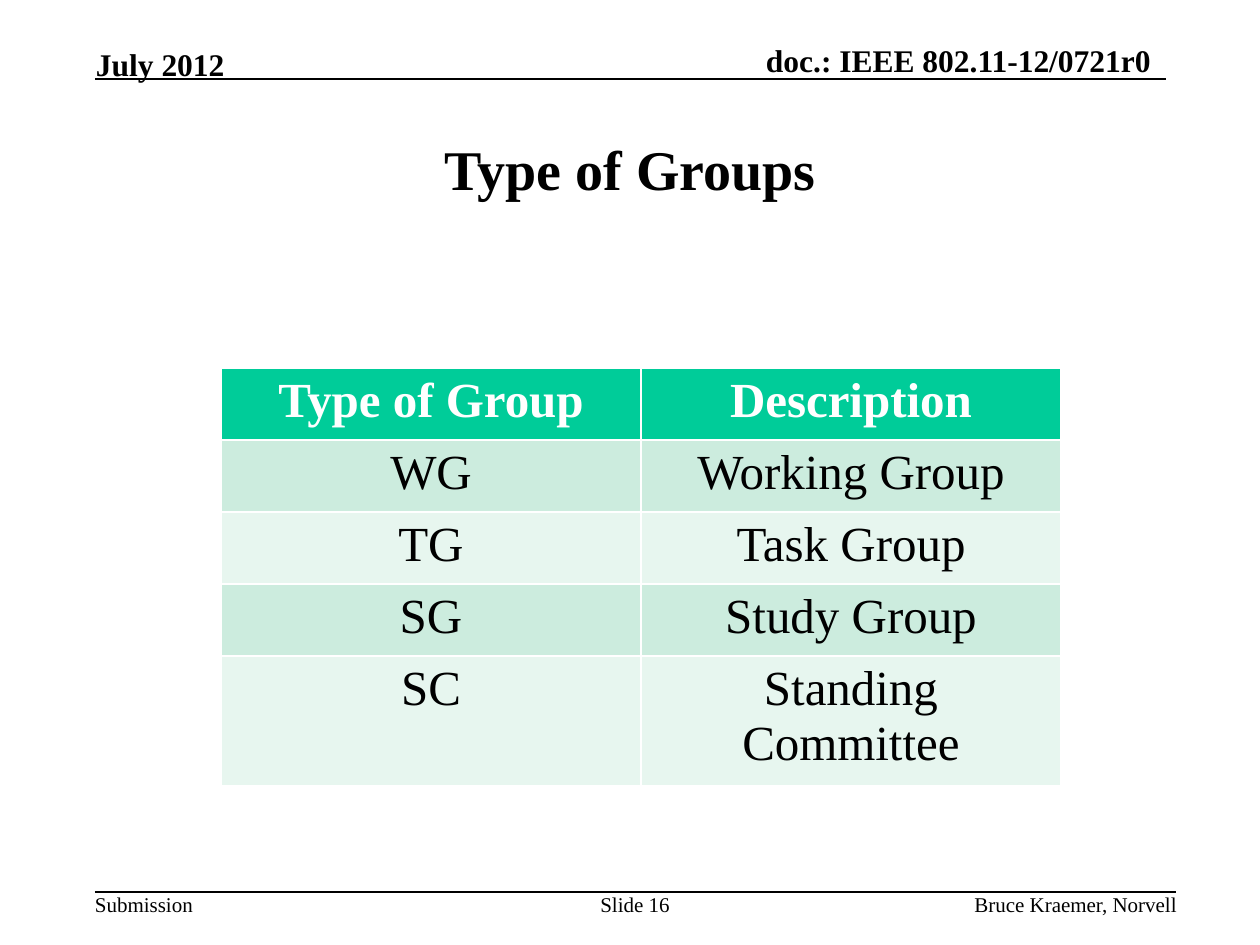
from pptx import Presentation
from pptx.util import Pt
from pptx.dml.color import RGBColor
from pptx.enum.shapes import MSO_CONNECTOR
from pptx.enum.text import MSO_ANCHOR, PP_ALIGN
from lxml import etree

LEFT, MID, RIGHT = PP_ALIGN.LEFT, PP_ALIGN.CENTER, PP_ALIGN.RIGHT
TOP, CENTER, BOTTOM = MSO_ANCHOR.TOP, MSO_ANCHOR.MIDDLE, MSO_ANCHOR.BOTTOM
STRAIGHT = MSO_CONNECTOR.STRAIGHT
BLACK = RGBColor(0, 0, 0)
WHITE = RGBColor(255, 255, 255)
GREEN = RGBColor(0, 204, 153)
BANDS = [RGBColor(204, 236, 222), RGBColor(231, 246, 239)]
FONT = "Times New Roman"
DML = "http://schemas.openxmlformats.org/drawingml/2006/main"
SCALE = 914400 / 126

TITLE = "Type of Groups"
GROUPS = [
    ("Type of Group", "Description"),
    ("WG", "Working Group"),
    ("TG", "Task Group"),
    ("SG", "Study Group"),
    ("SC", "Standing Committee"),
]
HEIGHTS = [72, 72, 72, 72, 130]
LABELS = [
    ("doc.: IEEE 802.11-12/0721r0", (683, 41, 468, 38), 18, True, RIGHT, BOTTOM),
    ("July 2012", (96, 45, 200, 38), 18, True, LEFT, BOTTOM),
    ("Submission", (95, 892, 200, 25), 12, False, LEFT, TOP),
    ("Slide 16", (575, 892, 120, 25), 12, False, MID, TOP),
    ("Bruce Kraemer, Norvell", (877, 892, 300, 25), 12, False, RIGHT, TOP),
]
RULES = [(95, 1166, 79), (95, 1176, 892)]


def px(n):
    return round(n * SCALE)


def write(frame, text, size=12, bold=False, color=BLACK, align=LEFT):
    line = frame.paragraphs[0]
    line.alignment = align
    run = line.add_run()
    run.text = text
    font = run.font
    font.name, font.size, font.bold = FONT, Pt(size), bold
    font.color.rgb = color


deck = Presentation()
deck.slide_width, deck.slide_height = px(1260), px(945)
slide = deck.slides.add_slide(deck.slide_layouts[5])
shapes = slide.shapes

title = shapes.title
title.left, title.top, title.width, title.height = map(px, (95, 95, 1070, 147))
title.text_frame.vertical_anchor = CENTER
write(title.text_frame, TITLE, size=32, bold=True, align=MID)

for left, right, y in RULES:
    rule = shapes.add_connector(STRAIGHT, px(left), px(y), px(right), px(y))
    rule.line.color.rgb = BLACK
    rule.line.width = Pt(1)
    etree.SubElement(rule._element.spPr, f"{{{DML}}}effectLst")

for text, place, size, bold, align, anchor in LABELS:
    frame = shapes.add_textbox(*map(px, place)).text_frame
    frame.margin_left = frame.margin_right = 0
    frame.margin_top = frame.margin_bottom = 0
    frame.word_wrap = True
    frame.vertical_anchor = anchor
    write(frame, text, size=size, bold=bold, align=align)

table = shapes.add_table(len(GROUPS), 2, px(221), px(368), px(840), px(sum(HEIGHTS))).table
for r, (row, height) in enumerate(zip(GROUPS, HEIGHTS)):
    table.rows[r].height = px(height)
    head = r == 0
    for c, text in enumerate(row):
        cell = table.cell(r, c)
        cell.fill.solid()
        cell.fill.fore_color.rgb = GREEN if head else BANDS[(r - 1) % 2]
        write(cell.text_frame, text, size=28, bold=head,
              color=WHITE if head else BLACK, align=MID)

deck.save("out.pptx")
